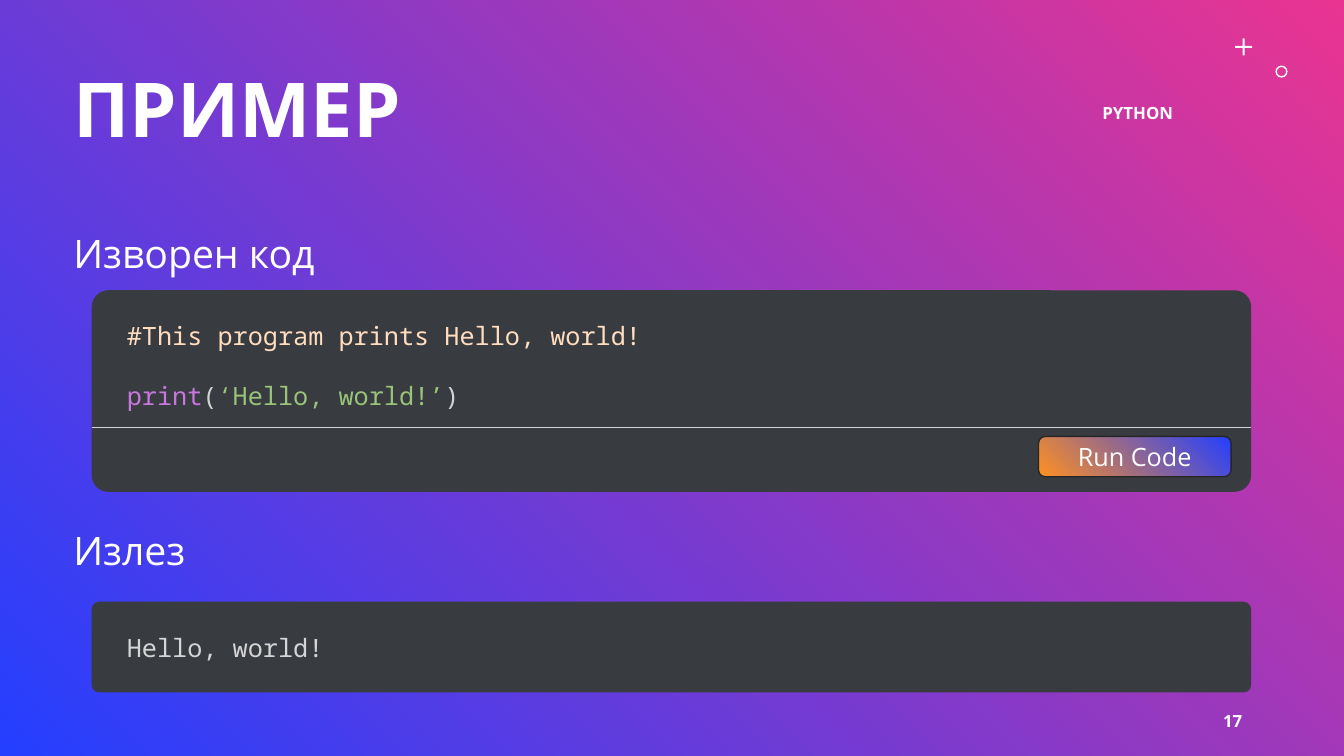
from lxml.etree import SubElement
from pptx import Presentation
from pptx.dml.color import RGBColor
from pptx.enum.shapes import MSO_CONNECTOR, MSO_SHAPE
from pptx.enum.text import MSO_ANCHOR, MSO_AUTO_SIZE, PP_ALIGN
from pptx.oxml.ns import qn
from pptx.util import Inches, Pt

SANS, MONO = "Open Sans", "Noto Sans Mono"
WHITE, PANEL, GREY, OUTLINE = "FFFFFF", "383B40", "D5D5D5", "262626"
BLUE, PINK, ORANGE = "243FFF", "E93491", "FF9022"

# Content
TITLE = "ПРИМЕР"
SMALL_LABELS = [  # text, box, alignment
    ("PYTHON", (9.3, 0.92, 3.97, 0.4), PP_ALIGN.CENTER),
    ("17", (9.42, 6.95, 3, 0.4), PP_ALIGN.RIGHT),
]
SECTIONS = [  # heading, heading top, panel top, panel height, lines of (text, colour)
    ("Изворен код", 2.28, 2.88, 2, [
        [("#This program prints Hello, world!", "FFDDBE")],
        [("print", "C678DD"), ("(", "D3D3D3"),
         ("‘Hello, world!’", "98C379"), (")", "D3D3D3")],
    ]),
    ("Излез", 5.23, 5.97, 0.9, [[("Hello, world!", GREY)]]),
]
BUTTON = "Run Code"
ORNAMENTS = [  # preset, box, adjustment
    (MSO_SHAPE.CROSS, (12.25, 0.38, 0.17, 0.17), 0.44),
    (MSO_SHAPE.DONUT, (12.65, 0.65, 0.12, 0.12), 0.12),
]

# Layout, in inches
MARGIN = 0.63
PANEL_LEFT, PANEL_WIDTH = 0.91, 11.5
CODE_INSET, CODE_WIDTH = 0.25, 7.66
DIVIDER_TOP = 4.24
LINE_GAP = 21.4  # points, one line of code


def color(value):
    return RGBColor.from_string(value)


def inches(box):
    return [Inches(length) for length in box]


def set_gradient(fill, start, end, angle):
    fill.gradient()
    fill.gradient_angle = angle
    for stop, position, value in zip(fill.gradient_stops, (0, 1), (start, end)):
        stop.position = position
        stop.color.rgb = color(value)


def style(paragraph, size, value=WHITE, name=SANS, bold=False):
    font = paragraph.font
    font.name, font.size, font.bold = name, Pt(size), bold
    font.color.rgb = color(value)


def add_text(box, anchor=MSO_ANCHOR.TOP):
    frame = slide.shapes.add_textbox(*inches(box)).text_frame
    frame.word_wrap = True
    frame.vertical_anchor = anchor
    return frame


def add_preset(preset, box, adjustment, fill=None):
    shape = slide.shapes.add_shape(preset, *inches(box))
    shape.shadow.inherit = False
    shape.adjustments[0] = adjustment
    shape.line.fill.background()
    if fill:
        shape.fill.solid()
        shape.fill.fore_color.rgb = color(fill)
    return shape


presentation = Presentation()
presentation.slide_width, presentation.slide_height = Inches(13.33), Inches(7.5)
slide = presentation.slides.add_slide(presentation.slide_layouts[5])
set_gradient(slide.background.fill, BLUE, PINK, 45)

# Corner ornaments
for preset, box, adjustment in ORNAMENTS:
    add_preset(preset, box, adjustment, WHITE)

# Title
title = slide.shapes.title
title.left, title.top, title.width, title.height = inches((MARGIN, 0.4, 11.78, 1.45))
title.text_frame.text = TITLE
title.text_frame.auto_size = MSO_AUTO_SIZE.NONE
title.text_frame.vertical_anchor = MSO_ANCHOR.MIDDLE
paragraph = title.text_frame.paragraphs[0]
paragraph.alignment, paragraph.line_spacing = PP_ALIGN.LEFT, 0.9
style(paragraph, 54, bold=True)

# Topic label and page number
for text, box, alignment in SMALL_LABELS:
    paragraph = add_text(box, MSO_ANCHOR.MIDDLE).paragraphs[0]
    paragraph.text, paragraph.alignment = text, alignment
    style(paragraph, 12, bold=True)

# Headings with their code panels
for heading, heading_top, panel_top, panel_height, lines in SECTIONS:
    paragraph = add_text((MARGIN, heading_top, 4.98, 0.9)).paragraphs[0]
    paragraph.text, paragraph.line_spacing = heading, 0.9
    style(paragraph, 28)
    add_preset(MSO_SHAPE.ROUNDED_RECTANGLE,
               (PANEL_LEFT, panel_top, PANEL_WIDTH, panel_height), 0.083, PANEL)
    frame = add_text((PANEL_LEFT + CODE_INSET, panel_top + CODE_INSET,
                      CODE_WIDTH, 0.4 if len(lines) == 1 else 1.01))
    for index, line in enumerate(lines):
        paragraph = frame.add_paragraph() if index else frame.paragraphs[0]
        paragraph.space_before = Pt(LINE_GAP if index else 0)
        style(paragraph, 18, GREY, MONO)
        for text, value in line:
            run = paragraph.add_run()
            run.text = text
            run.font.color.rgb = color(value)

# Run button
button = add_preset(MSO_SHAPE.ROUNDED_RECTANGLE, (10.3, 4.33, 1.91, 0.4), 0.167)
set_gradient(button.fill, BLUE, ORANGE, 225)
button.line.color.rgb = color(OUTLINE)
button.line.width = Pt(1)
button.text_frame.text = BUTTON
button.text_frame.vertical_anchor = MSO_ANCHOR.MIDDLE
paragraph = button.text_frame.paragraphs[0]
paragraph.alignment = PP_ALIGN.CENTER
style(paragraph, 18)

# Divider above the button
divider = slide.shapes.add_connector(MSO_CONNECTOR.STRAIGHT, *inches(
    (PANEL_LEFT, DIVIDER_TOP, PANEL_LEFT + PANEL_WIDTH, DIVIDER_TOP)))
divider.line.color.rgb = color(GREY)
divider.line.width = Pt(1)
SubElement(divider._element.spPr, qn("a:effectLst"))

presentation.save("out.pptx")
